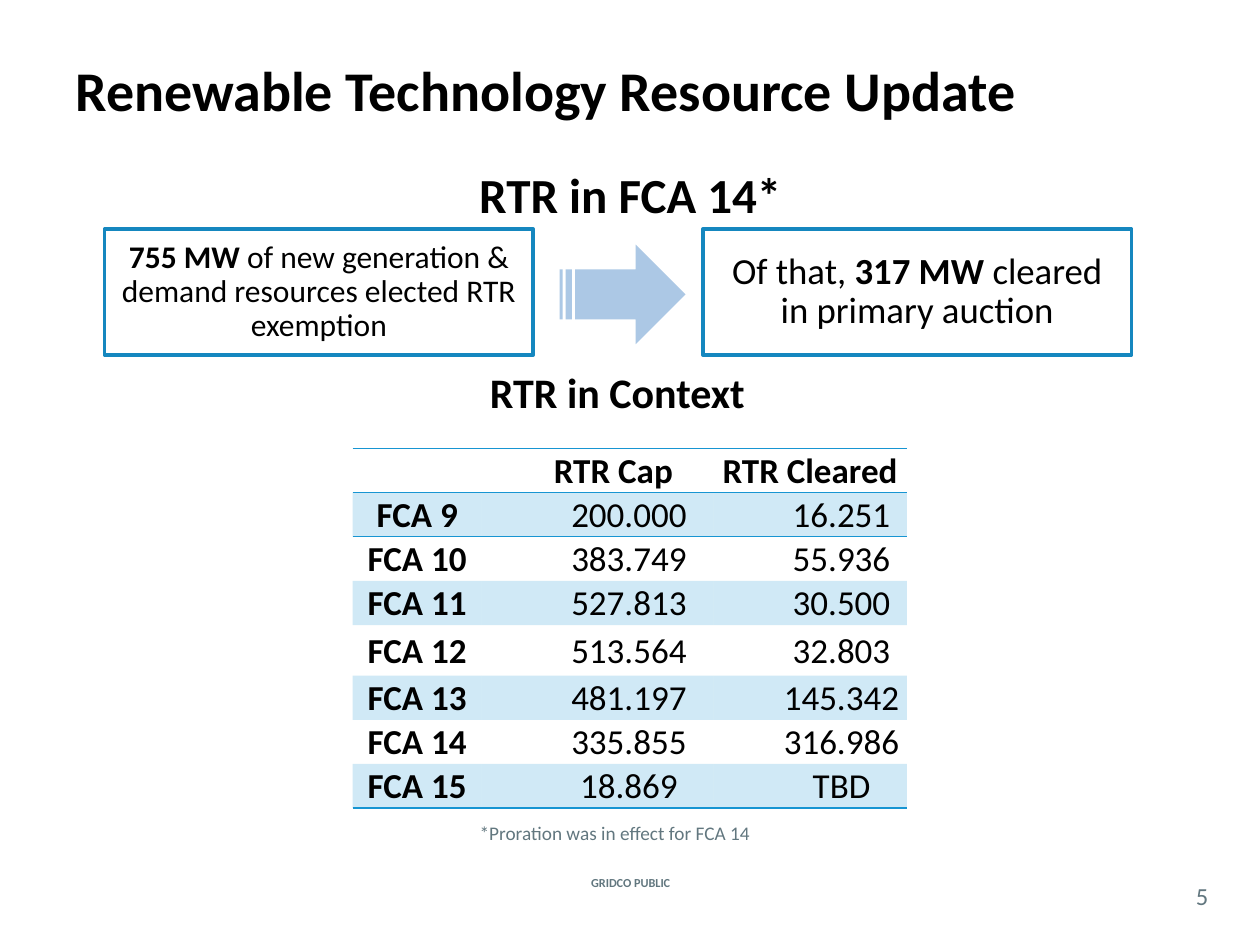
from lxml import etree
from pptx import Presentation
from pptx.dml.color import RGBColor
from pptx.enum.shapes import MSO_SHAPE
from pptx.enum.text import MSO_ANCHOR, PP_ALIGN
from pptx.oxml.ns import qn
from pptx.util import Cm, Pt

LEFT, CENTER = PP_ALIGN.LEFT, PP_ALIGN.CENTER
TOP, MIDDLE = MSO_ANCHOR.TOP, MSO_ANCHOR.MIDDLE
RECTANGLE = MSO_SHAPE.RECTANGLE
STRIPED_ARROW = MSO_SHAPE.STRIPED_RIGHT_ARROW

FONT = "Calibri"
BLACK, WHITE, GRAY = "000000", "FFFFFF", "62777F"
TABLE_BLUE, BOX_BLUE, ARROW_BLUE = "1795D2", "1587BF", "ACC8E5"
PLAIN_TABLE_STYLE = "{2D5ABB26-0587-4C30-8999-92F81FD0307C}"
COLUMN_WIDTHS = (2.6, 4.67, 3.9)
ROW_HEIGHT, TALL_ROW, TALL_HEIGHT = 0.89, 4, 1.02
HEADER_INDENTS = (0, 0.64, 0)
VALUE_INDENT = 1.27
RTR_ROWS = (
    ("", "RTR Cap", "RTR Cleared"),
    ("FCA 9", "200.000", "16.251"),
    ("FCA 10", "383.749", "55.936"),
    ("FCA 11", "527.813", "30.500"),
    ("FCA 12", "513.564", "32.803"),
    ("FCA 13", "481.197", "145.342"),
    ("FCA 14", "335.855", "316.986"),
    ("FCA 15", "18.869", "TBD"),
)


def color(value):
    return RGBColor.from_string(value)


def lengths(*values):
    return [Cm(value) for value in values]


def write(para, spans, size, ink=BLACK, align=CENTER):
    para.alignment = align
    for text, bold in spans:
        span = para.add_run()
        span.text = text
        span.font.name = FONT
        span.font.size = Pt(size)
        span.font.bold = bold
        span.font.color.rgb = color(ink)


def set_margins(target, left, top, right, bottom):
    target.margin_left, target.margin_top = Cm(left), Cm(top)
    target.margin_right, target.margin_bottom = Cm(right), Cm(bottom)


def add_label(page, place, text, size, bold=True, ink=BLACK, align=CENTER,
              anchor=TOP, margins=(0.25, 0.13, 0.25, 0.13)):
    frame = page.shapes.add_textbox(*lengths(*place)).text_frame
    frame.word_wrap = True
    frame.vertical_anchor = anchor
    set_margins(frame, *margins)
    write(frame.paragraphs[0], [(text, bold)], size, ink, align)


def add_preset(page, preset, place, fill):
    shape = page.shapes.add_shape(preset, *lengths(*place))
    shape.shadow.inherit = False
    shape.fill.solid()
    shape.fill.fore_color.rgb = color(fill)
    shape.line.fill.background()
    return shape


def add_box(page, left, spans, size, margin):
    box = add_preset(page, RECTANGLE, (left, 4.62, 8.64, 2.54), WHITE)
    box.line.color.rgb = color(BOX_BLUE)
    box.line.width = Pt(2)
    frame = box.text_frame
    frame.word_wrap = True
    frame.vertical_anchor = MIDDLE
    set_margins(frame, *[margin] * 4)
    para = frame.paragraphs[0]
    para.line_spacing = 0.9
    write(para, spans, size)


def fill_band(cell):
    cell.fill.solid()
    cell.fill.fore_color.rgb = color(TABLE_BLUE)
    tint = cell._tc.tcPr.find(".//" + qn("a:srgbClr"))
    etree.SubElement(tint, qn("a:alpha"), val="20000")


def add_borders(cell, sides):
    properties = cell._tc.get_or_add_tcPr()
    for position, side in enumerate(sides):
        line = etree.Element(qn("a:ln" + side), w=str(Pt(1)))
        fill = etree.SubElement(line, qn("a:solidFill"))
        etree.SubElement(fill, qn("a:srgbClr"), val=TABLE_BLUE)
        properties.insert(position, line)


def fill_cell(cell, text, bold, indent):
    cell.vertical_anchor = MIDDLE
    set_margins(cell, 0.03, 0.03, 0.03, 0)
    para = cell.text_frame.paragraphs[0]
    if text:
        write(para, [(text, bold)], 20)
    if indent:
        para._p.get_or_add_pPr().set("marL", str(Cm(indent)))


def add_rtr_table(page):
    place = lengths(7.11, 9.04, sum(COLUMN_WIDTHS), 7.26)
    frame = page.shapes.add_table(len(RTR_ROWS), len(COLUMN_WIDTHS), *place)
    table = frame.table
    table.horz_banding = False
    table._tbl.tblPr.find(qn("a:tableStyleId")).text = PLAIN_TABLE_STYLE
    for column, width in zip(table.columns, COLUMN_WIDTHS):
        column.width = Cm(width)
    last = len(RTR_ROWS) - 1
    borders = {0: "TB", 1: "T", last: "B"}
    for index, texts in enumerate(RTR_ROWS):
        table.rows[index].height = Cm(TALL_HEIGHT if index == TALL_ROW else ROW_HEIGHT)
        indents = (0, VALUE_INDENT, VALUE_INDENT) if index else HEADER_INDENTS
        for column, text in enumerate(texts):
            cell = table.cell(index, column)
            fill_cell(cell, text, index == 0 or column == 0, indents[column])
            if index % 2:
                fill_band(cell)
            add_borders(cell, borders.get(index, ""))


def main():
    deck = Presentation()
    deck.slide_width, deck.slide_height = lengths(25.4, 19.05)
    page = deck.slides.add_slide(deck.slide_layouts[6])

    add_label(page, (10.85, 17.58, 3.73, 0.43), "GRIDCO PUBLIC", 7, ink=GRAY, anchor=MIDDLE)
    add_label(page, (1.27, 0.2, 22.86, 3.18), "Renewable Technology Resource Update", 32,
              align=LEFT, anchor=MIDDLE)
    add_rtr_table(page)
    add_label(page, (5.77, 3.18, 13.87, 1.45), "RTR in FCA 14*", 28)
    add_box(page, 2.11, [
        ("755 MW ", True),
        ("of new generation & demand resources elected RTR exemption", False),
    ], 18, 0.18)
    add_preset(page, STRIPED_ARROW, (11.28, 4.93, 2.54, 2.01), ARROW_BLUE)
    add_box(page, 14.17, [
        ("Of that, ", False),
        ("317 MW ", True),
        ("cleared in primary auction", False),
    ], 21, 0.23)
    add_label(page, (5.51, 7.26, 13.87, 1.27), "RTR in Context", 24)
    add_label(page, (0.43, 16.43, 23.93, 0.74), "*Proration was in effect for FCA 14", 11,
              bold=False, ink=GRAY)
    add_label(page, (23.7, 17.68, 1.07, 0.74), "5", 14, bold=False, ink=GRAY,
              anchor=MIDDLE, margins=(0, 0, 0, 0))
    deck.save("out.pptx")


if __name__ == "__main__":
    main()
